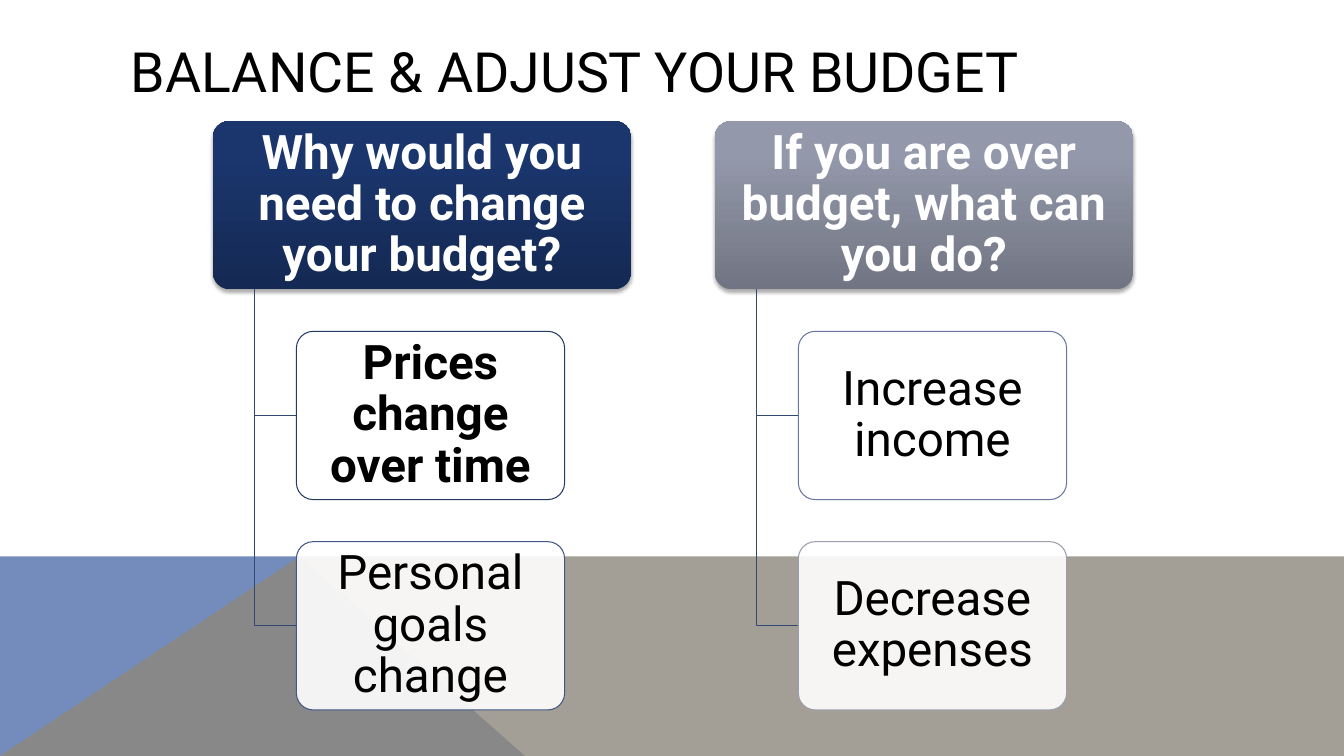
import pptx
import pptx.dml.color
import pptx.enum.shapes
import pptx.enum.text
import pptx.oxml
import pptx.oxml.ns
import pptx.util

Cm = pptx.util.Cm
Pt = pptx.util.Pt
RGBColor = pptx.dml.color.RGBColor
Align = pptx.enum.text.PP_ALIGN
qn = pptx.oxml.ns.qn

BLACK = RGBColor(0x00, 0x00, 0x00)
WHITE = RGBColor(0xFF, 0xFF, 0xFF)
FLOOR_BLUE = RGBColor(0x74, 0x8C, 0xBC)
FLOOR_TAUPE = RGBColor(0x8E, 0x88, 0x7C)
BRANCH = RGBColor(0x33, 0x47, 0x74)
NAVY = [(0, RGBColor(0x14, 0x2A, 0x54)), (80, RGBColor(0x1B, 0x36, 0x6D)), (100, RGBColor(0x19, 0x36, 0x6F))]
GREY = [(0, RGBColor(0x71, 0x75, 0x83)), (80, RGBColor(0x93, 0x98, 0xAA)), (100, RGBColor(0x93, 0x98, 0xAB))]
PRICES_EDGE = RGBColor(0x25, 0x3B, 0x67)
GOALS_EDGE = RGBColor(0x42, 0x57, 0x88)
INCOME_EDGE = RGBColor(0x69, 0x77, 0xA0)
EXPENSES_EDGE = RGBColor(0x9A, 0x9E, 0xAD)

SLIDE_W, SLIDE_H = Cm(33.87), Cm(19.05)
CARD_H = Cm(4.24)
ROW_PITCH = Cm(5.3)
ANSWER_W = Cm(6.76)
ANSWER_INDENT = Cm(2.11)
BRANCH_INDENT = Cm(1.06)

COLUMNS = [
    (Cm(5.36), "Why would you need to change your budget?", NAVY, [
        ("Prices change over time", PRICES_EDGE, True),
        ("Personal goals change", GOALS_EDGE, False),
    ]),
    (Cm(18.01), "If you are over budget, what can you do?", GREY, [
        ("Increase income", INCOME_EDGE, False),
        ("Decrease expenses", EXPENSES_EDGE, False),
    ]),
]


def write_text(shape, text, size=34, color=BLACK, bold=False, align=Align.CENTER,
               spacing=0.9, inset_x=Cm(0.3), inset_y=Cm(0.25)):
    frame = shape.text_frame
    frame.word_wrap = True
    frame.auto_size = pptx.enum.text.MSO_AUTO_SIZE.NONE
    frame.vertical_anchor = pptx.enum.text.MSO_ANCHOR.MIDDLE
    frame.margin_left = frame.margin_right = inset_x
    frame.margin_top = frame.margin_bottom = inset_y
    paragraph = frame.paragraphs[0]
    paragraph.alignment = align
    paragraph.line_spacing = spacing
    run = paragraph.add_run()
    run.text = text
    run.font.name = "Roboto"
    run.font.size = Pt(size)
    run.font.bold = bold
    run.font.color.rgb = color


def paint(shape, color, opacity=100):
    shape.fill.solid()
    shape.fill.fore_color.rgb = color
    if opacity < 100:
        tint = shape.fill._xPr.find(qn("a:solidFill"))[0]
        tint.append(pptx.oxml.parse_xml(
            f'<a:alpha {pptx.oxml.ns.nsdecls("a")} val="{opacity * 1000}"/>'))


def paint_gradient(shape, stops):
    shape.fill.gradient()
    gradient = shape.fill._xPr.find(qn("a:gradFill"))
    marks = "".join(f'<a:gs pos="{at * 1000}"><a:srgbClr val="{color}"/></a:gs>' for at, color in stops)
    gradient.getparent().replace(gradient, pptx.oxml.parse_xml(
        f'<a:gradFill {pptx.oxml.ns.nsdecls("a")} rotWithShape="1"><a:gsLst>{marks}</a:gsLst>'
        '<a:lin ang="16200000" scaled="0"/></a:gradFill>'))


def drop_shadow(shape):
    shape._element.spPr.find(qn("a:effectLst")).append(pptx.oxml.parse_xml(
        f'<a:outerShdw {pptx.oxml.ns.nsdecls("a")} blurRad="{Pt(3.1)}" dist="{Pt(1.8)}" '
        'dir="5400000" rotWithShape="0"><a:srgbClr val="000000"><a:alpha val="35000"/>'
        '</a:srgbClr></a:outerShdw>'))


def add_outline(slide, points, closed):
    builder = slide.shapes.build_freeform(*points[0])
    builder.add_line_segments(points[1:], close=closed)
    outline = builder.convert_to_shape()
    outline.shadow.inherit = False
    return outline


def add_card(slide, left, top, width):
    card = slide.shapes.add_shape(
        pptx.enum.shapes.MSO_SHAPE.ROUNDED_RECTANGLE, left, top, width, CARD_H)
    card.adjustments[0] = 0.1
    card.shadow.inherit = False
    return card


def add_floor(slide, left, top, width, height):
    peak, foot, bottom = left + Cm(7.55), left + Cm(13.23), top + height
    wedge = [(left, bottom), (left, top), (peak, top), (foot, bottom)]
    ground = [(left, bottom), (peak, top), (left + width, top), (left + width, bottom)]
    for points, color, opacity in [(wedge, FLOOR_BLUE, 100), (ground, FLOOR_TAUPE, 80)]:
        area = add_outline(slide, points, True)
        paint(area, color, opacity)
        area.line.fill.background()


def add_heading(slide, left, top, width, height):
    heading = slide.shapes.title
    heading.left, heading.top, heading.width, heading.height = left, top, width, height
    write_text(heading, "BALANCE & ADJUST YOUR BUDGET", size=39.6, align=Align.LEFT,
               spacing=1.0, inset_x=Cm(0.25), inset_y=Cm(0.13))


def add_column(slide, left, top, width, question, gradient, answers):
    question_card = add_card(slide, left, top, width)
    paint_gradient(question_card, gradient)
    question_card.line.fill.background()
    drop_shadow(question_card)
    write_text(question_card, question, color=WHITE, bold=True)

    stem, answer_left = left + BRANCH_INDENT, left + ANSWER_INDENT
    for row, (answer, edge, bold) in enumerate(answers, start=1):
        answer_top = top + row * ROW_PITCH
        middle = answer_top + CARD_H // 2
        branch = add_outline(
            slide, [(stem, top + CARD_H), (stem, middle), (answer_left, middle)], False)
        branch.fill.background()
        branch.line.color.rgb = BRANCH
        branch.line.width = Pt(0.75)

        answer_card = add_card(slide, answer_left, answer_top, ANSWER_W)
        paint(answer_card, WHITE, 90)
        answer_card.line.color.rgb = edge
        answer_card.line.width = Pt(0.75)
        write_text(answer_card, answer, bold=bold)


def main():
    deck = pptx.Presentation()
    deck.slide_width, deck.slide_height = SLIDE_W, SLIDE_H
    slide = deck.slides.add_slide(deck.slide_layouts.get_by_name("Title Only"))
    add_floor(slide, 0, Cm(14.02), SLIDE_W, Cm(5.03))
    add_heading(slide, Cm(3.05), Cm(1.02), Cm(27.86), Cm(1.52))
    for left, question, gradient, answers in COLUMNS:
        add_column(slide, left, Cm(3.05), Cm(10.55), question, gradient, answers)
    deck.save("out.pptx")


if __name__ == "__main__":
    main()
